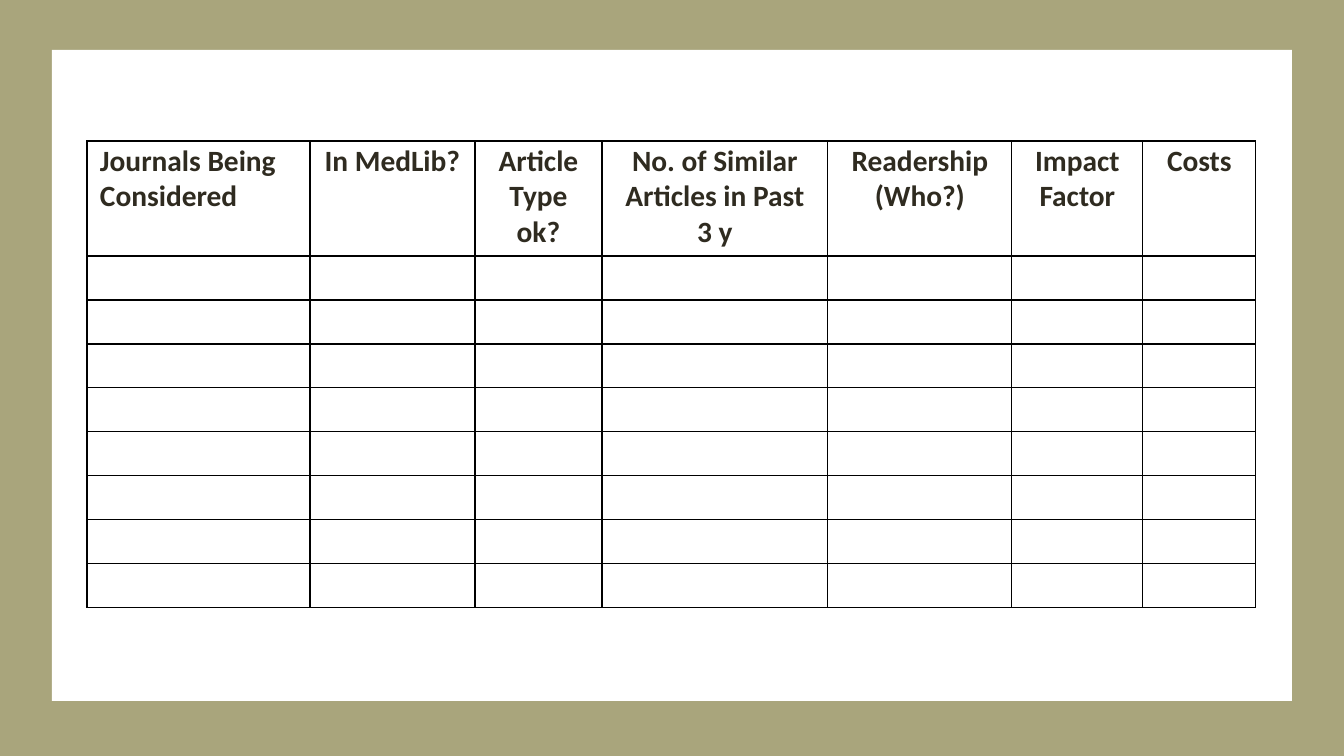
from lxml import etree
from pptx import Presentation
from pptx import util as u
from pptx.dml import color
from pptx.enum import shapes, text
from pptx.oxml import ns

COLORS = {"olive": "A9A57C", "white": "FFFFFF", "ink": "2F2B20", "grid": "000000"}
WIDTH, HEIGHT = 1344, 756
PX_PER_INCH = 100.8
HEADERS = [
    "Journals Being Considered",
    "In MedLib?",
    "Article Type ok?",
    "No. of Similar Articles in Past 3 y",
    "Readership (Who?)",
    "Impact Factor",
    "Costs",
]
COLUMN_WIDTHS = [223, 165, 127, 226, 184, 131, 113]
ROW_HEIGHTS = [115] + [44] * 8


def px(value):
    return u.Inches(value / PX_PER_INCH)


def rgb(name):
    return color.RGBColor.from_string(COLORS[name])


def write(frame, content, size=21, bold=True, ink="ink", font="Calibri", align=text.PP_ALIGN.CENTER):
    paragraph = frame.paragraphs[0]
    paragraph.alignment = align
    run = paragraph.add_run()
    run.text = content
    run.font.name = font
    run.font.size = u.Pt(size)
    run.font.bold = bold
    run.font.color.rgb = rgb(ink)


class SlideBuilder:
    margins = {"left": 13, "top": 2, "right": 13, "bottom": 0}
    border_width = u.Pt(1)

    def __init__(self, slide):
        self.slide = slide

    def rectangle(self, left, top, width, height, fill):
        shape = self.slide.shapes.add_shape(
            shapes.MSO_SHAPE.RECTANGLE, px(left), px(top), px(width), px(height)
        )
        shape.shadow.inherit = False
        shape.fill.solid()
        shape.fill.fore_color.rgb = rgb(fill)
        shape.line.fill.background()

    def border(self, cell):
        properties = cell._tc.get_or_add_tcPr()
        for index, side in enumerate(("lnL", "lnR", "lnT", "lnB")):
            line = etree.Element(ns.qn(f"a:{side}"), w=str(self.border_width))
            fill = etree.SubElement(line, ns.qn("a:solidFill"))
            etree.SubElement(fill, ns.qn("a:srgbClr"), val=COLORS["grid"])
            properties.insert(index, line)

    def table(self, left, top, column_widths, row_heights, headers):
        table = self.slide.shapes.add_table(
            len(row_heights), len(column_widths), px(left), px(top),
            px(sum(column_widths)), px(sum(row_heights)),
        ).table
        table.first_row = table.horz_banding = False
        for column, width in zip(table.columns, column_widths):
            column.width = px(width)
        for row, height in zip(table.rows, row_heights):
            row.height = px(height)
        for cell in table.iter_cells():
            for side, margin in self.margins.items():
                setattr(cell, f"margin_{side}", px(margin))
            cell.fill.background()
            self.border(cell)
        for index, header in enumerate(headers):
            align = text.PP_ALIGN.CENTER if index else text.PP_ALIGN.LEFT
            write(table.cell(0, index).text_frame, header, align=align)


def main():
    presentation = Presentation()
    presentation.slide_width = px(WIDTH)
    presentation.slide_height = px(HEIGHT)
    builder = SlideBuilder(presentation.slides.add_slide(presentation.slide_layouts[6]))
    builder.rectangle(0, 0, WIDTH, HEIGHT, "olive")
    builder.rectangle(52, 50, 1240, 651, "white")
    builder.table(87, 141, COLUMN_WIDTHS, ROW_HEIGHTS, HEADERS)
    presentation.save("out.pptx")


if __name__ == "__main__":
    main()
